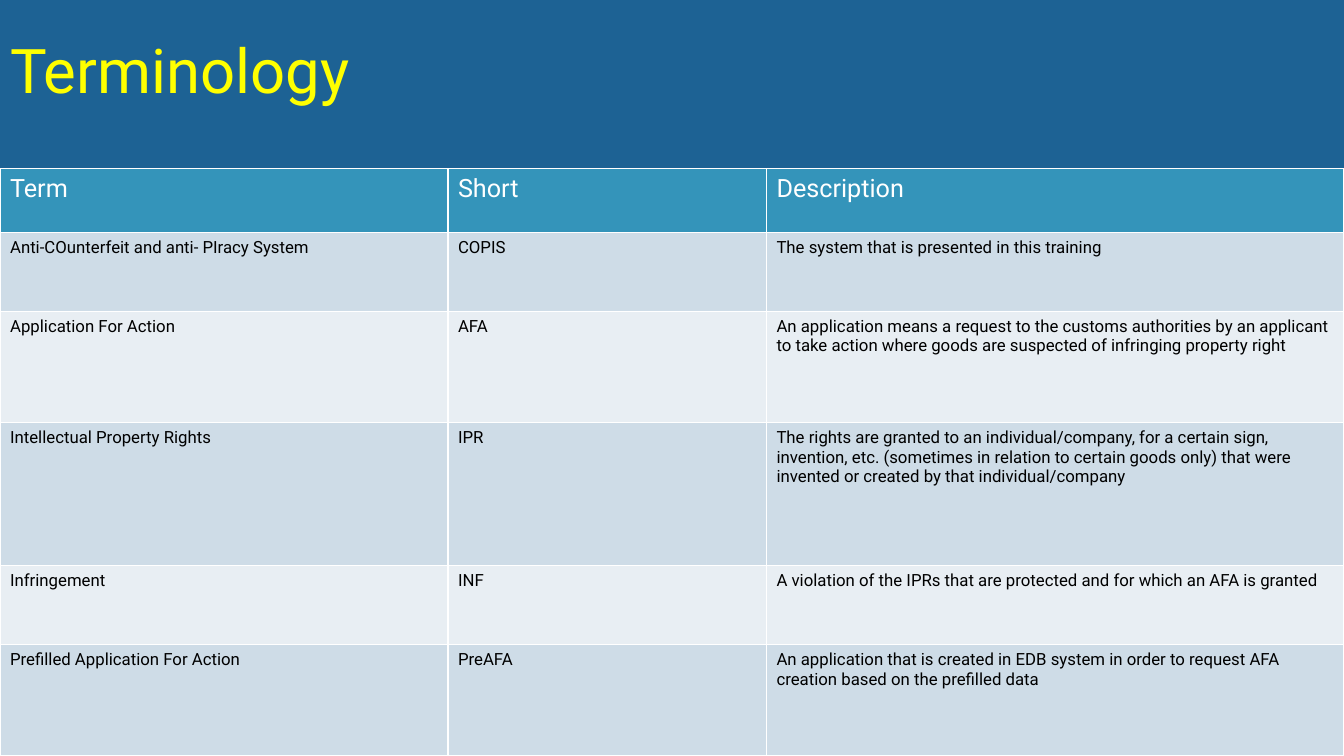
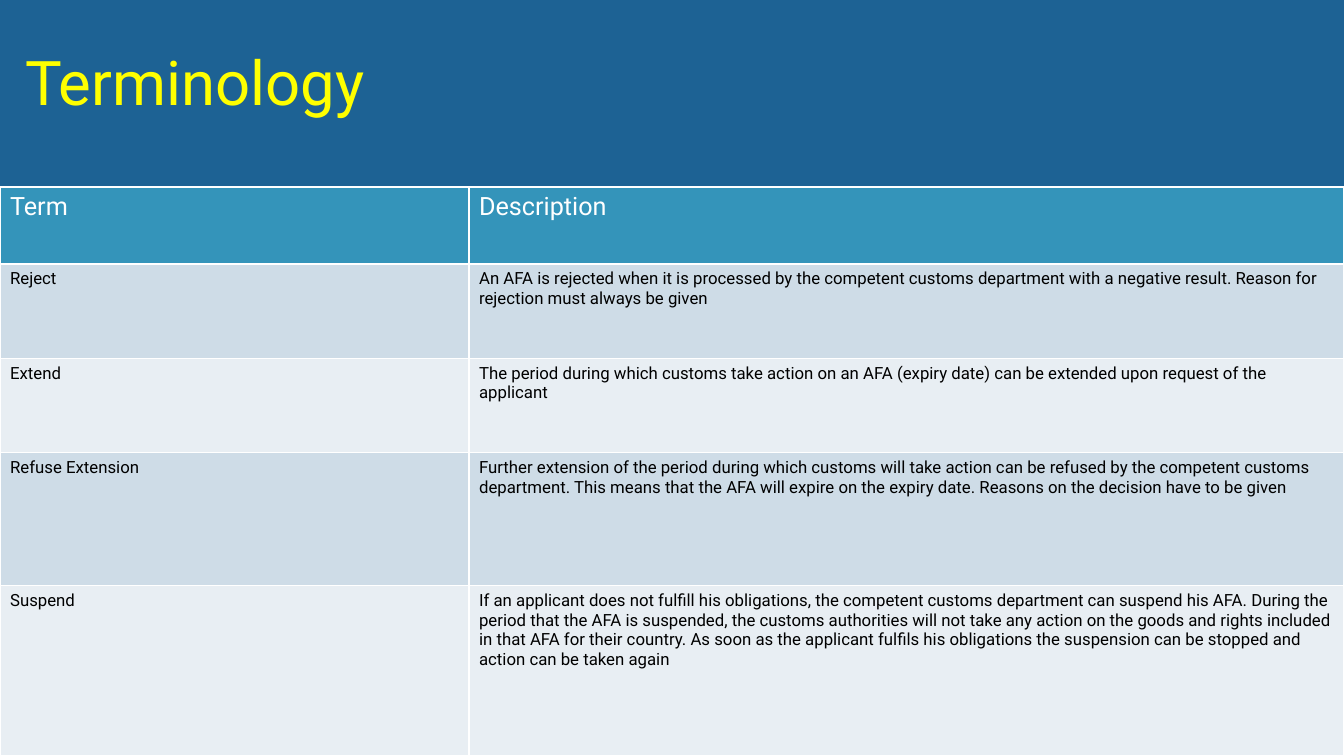
from pptx import Presentation
from pptx import util as u
from pptx.dml import color
from pptx.enum import text
from pptx.oxml import parse_xml
from pptx.oxml import ns

WIDTH, HEIGHT = 960, 540
FONT = "Roboto"
BACK, GOLD, WHITE, BLACK = "1D6294", "FFFF00", "FFFFFF", "000000"
HEAD, BANDS = "3494BA", ("CEDCE7", "E8EEF3")

TERMS = [
    ("Term", "Short", "Description"),
    ("Anti-COunterfeit and anti- PIracy System", "COPIS",
     "The system that is presented in this training"),
    ("Application For Action", "AFA",
     "An application means a request to the customs authorities by an applicant "
     "to take action where goods are suspected of infringing property right"),
    ("Intellectual Property Rights", "IPR",
     "The rights are granted to an individual/company, for a certain sign, "
     "invention, etc. (sometimes in relation to certain goods only) that were "
     "invented or created by that individual/company"),
    ("Infringement", "INF",
     "A violation of the IPRs that are protected and for which an AFA is granted"),
    ("Prefilled Application For Action", "PreAFA",
     "An application that is created in EDB system in order to request AFA "
     "creation based on the prefilled data"),
]

ACTIONS = [
    ("Term", "Description"),
    ("Reject",
     "An AFA is rejected when it is processed by the competent customs department "
     "with a negative result. Reason for rejection must always be given"),
    ("Extend",
     "The period during which customs take action on an AFA (expiry date) can be "
     "extended upon request of the applicant"),
    ("Refuse Extension",
     "Further extension of the period during which customs will take action can be "
     "refused by the competent customs department. This means that the AFA will "
     "expire on the expiry date. Reasons on the decision have to be given"),
    ("Suspend",
     "If an applicant does not fulfill his obligations, the competent customs "
     "department can suspend his AFA. During the period that the AFA is suspended, "
     "the customs authorities will not take any action on the goods and rights "
     "included in that AFA for their country. As soon as the applicant fulfils his "
     "obligations the suspension can be stopped and action can be taken again"),
]


def paint(fill, tone):
    fill.solid()
    fill.fore_color.rgb = color.RGBColor.from_string(tone)


def style(frame, size, tone):
    for para in frame.paragraphs:
        para.alignment = text.PP_ALIGN.LEFT
        for run in para.runs:
            run.font.name = FONT
            run.font.size = u.Pt(size)
            run.font.bold = False
            paint(run.font.fill, tone)


def add_title(slide, label, left, top):
    title = slide.shapes.title
    title.left, title.top = u.Pt(left), u.Pt(top)
    title.width, title.height = u.Pt(828), u.Pt(104.4)
    frame = title.text_frame
    frame.text = label
    frame.word_wrap = True
    frame.auto_size = text.MSO_AUTO_SIZE.NONE
    frame.vertical_anchor = text.MSO_ANCHOR.MIDDLE
    frame.paragraphs[0].line_spacing = 0.9
    style(frame, 44, GOLD)


def add_rules(cell, tone, weight):
    props = cell._tc.get_or_add_tcPr()
    for side in "LRTB":
        props.append(parse_xml(
            f'<a:ln{side} {ns.nsdecls("a")} w="{u.Pt(weight)}"><a:solidFill>'
            f'<a:srgbClr val="{tone}"/></a:solidFill></a:ln{side}>'))


def add_grid(slide, rows, widths, heights):
    tall = sum(heights)
    frame = slide.shapes.add_table(
        len(rows), len(widths), 0, u.Pt(HEIGHT - tall), u.Pt(WIDTH), u.Pt(tall))
    grid = frame.table
    grid.first_row = grid.horz_banding = False
    for col, wide in zip(grid.columns, widths):
        col.width = u.Pt(wide)
    for r, (row, high) in enumerate(zip(rows, heights)):
        grid.rows[r].height = u.Pt(high)
        size, tone, band = (12, BLACK, BANDS[(r - 1) % 2]) if r else (18, WHITE, HEAD)
        for c, label in enumerate(row):
            cell = grid.cell(r, c)
            cell.text_frame.text = label
            style(cell.text_frame, size, tone)
            add_rules(cell, WHITE, 1)
            paint(cell.fill, band)


def add_page(deck, left, top, rows, widths, heights):
    slide = deck.slides.add_slide(deck.slide_layouts[5])
    add_title(slide, "Terminology", left, top)
    add_grid(slide, rows, widths, heights)


def main():
    deck = Presentation()
    deck.slide_width, deck.slide_height = u.Pt(WIDTH), u.Pt(HEIGHT)
    paint(deck.slide_master.background.fill, BACK)
    add_page(deck, 0, 0, TERMS, (320, 227.5, 412.5),
             (45.5, 56.5, 79.5, 102, 56.5, 79.5))
    add_page(deck, 10.8, 8.6, ACTIONS, (335, 625),
             (55, 67.5, 67.5, 95, 121.5))
    deck.save("out.pptx")


if __name__ == "__main__":
    main()
